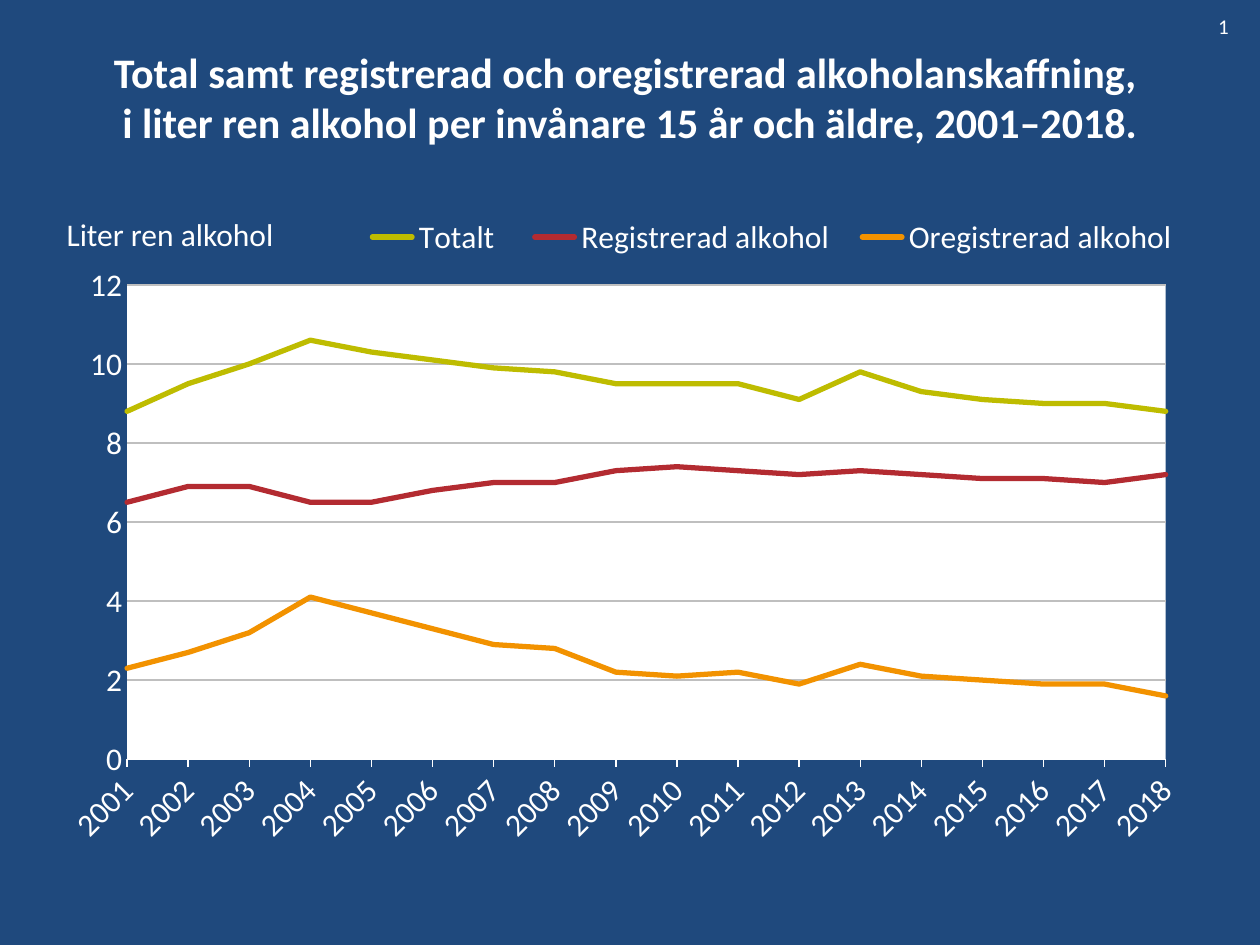
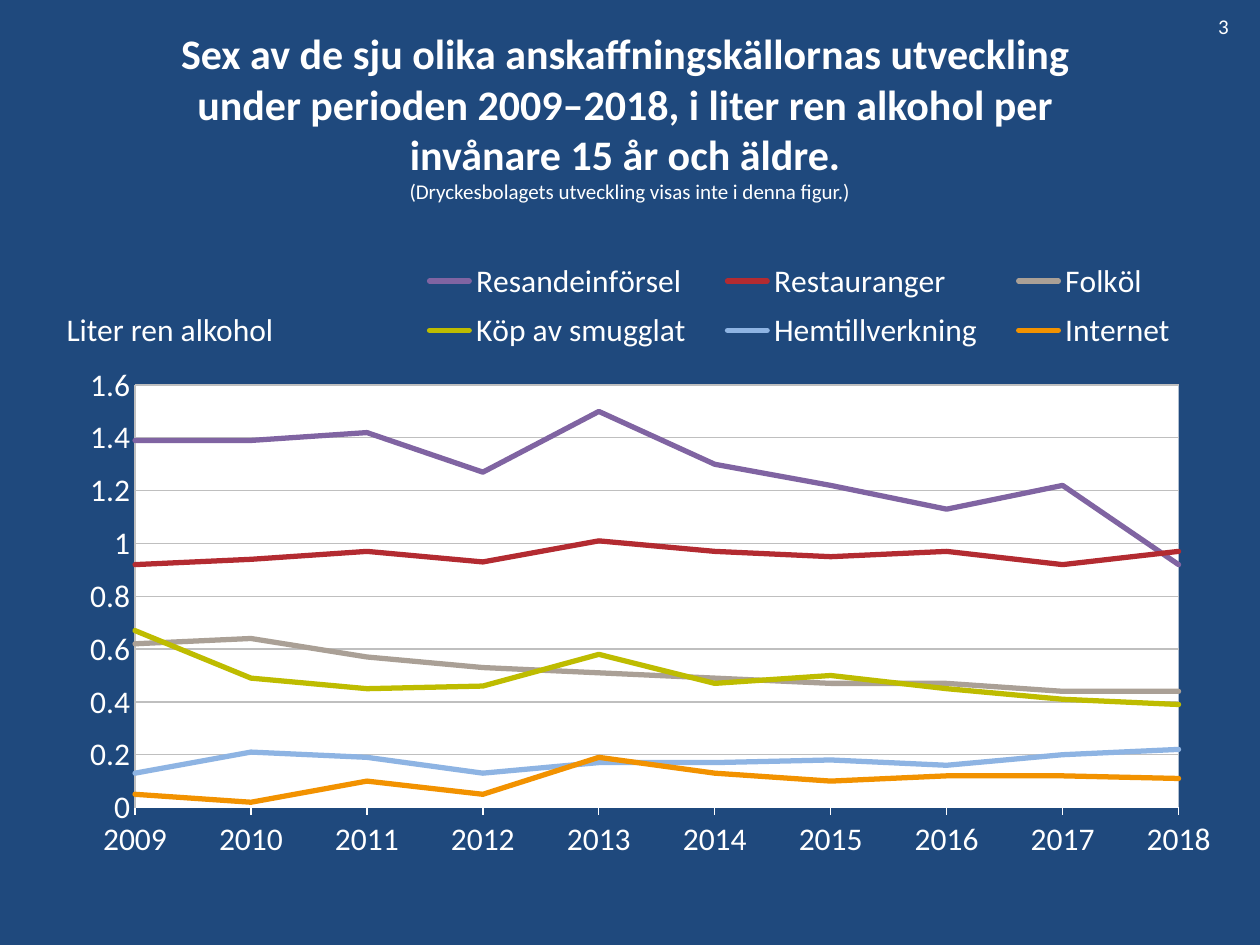
from lxml.etree import SubElement
from pptx import Presentation
from pptx.chart.data import CategoryChartData
from pptx.dml.color import RGBColor
from pptx.enum.chart import XL_CHART_TYPE, XL_LEGEND_POSITION, XL_TICK_MARK
from pptx.enum.text import MSO_ANCHOR, MSO_AUTO_SIZE, PP_ALIGN
from pptx.oxml import parse_xml
from pptx.oxml.ns import nsdecls, qn
from pptx.util import Inches, Pt

FONT = "Calibri"
NAVY, WHITE, GRID = "1F497D", "FFFFFF", "BFBFBF"
OLIVE, RED, ORANGE = "BEBC00", "B32B31", "F29200"
PURPLE, TAUPE, SKY = "8064A2", "AAA096", "8EB4E3"

# Content: positions in inches, layouts as fractions of the chart
SLIDES = [
    {
        "number": "1",
        "title": "Total samt registrerad och oregistrerad alkoholanskaffning, \v"
                 "i liter ren alkohol per invånare 15 år och äldre, 2001–2018.",
        "title_box": (0, 0.14, 10, 1.25),
        "unit_box": (0.43, 1.66, 2.05, 0.4),
        "chart_box": (0.51, 1.7, 9.06, 5.2),
        "plot_layout": (0.055, 0.108, 0.91, 0.724),
        "legend_layout": (0.25, 0.0, 0.74, 0.07),
        "years": range(2001, 2019),
        "scale": (12, 2, "0"),
        "label_angle": -45,
        "value_line": None,
        "series": [
            ("Totalt ", OLIVE, [8.8, 9.5, 10, 10.6, 10.3, 10.1, 9.9, 9.8, 9.5,
                                9.5, 9.5, 9.1, 9.8, 9.3, 9.1, 9, 9, 8.8]),
            ("Registrerad alkohol", RED, [6.5, 6.9, 6.9, 6.5, 6.5, 6.8, 7, 7, 7.3,
                                          7.4, 7.3, 7.2, 7.3, 7.2, 7.1, 7.1, 7, 7.2]),
            ("Oregistrerad alkohol", ORANGE, [2.3, 2.7, 3.2, 4.1, 3.7, 3.3, 2.9, 2.8, 2.2,
                                              2.1, 2.2, 1.9, 2.4, 2.1, 2, 1.9, 1.9, 1.6]),
        ],
    },
    {
        "number": "3",
        "title": "Sex av de sju olika anskaffningskällornas utveckling \v"
                 "under perioden 2009–2018, i liter ren alkohol per \v"
                 "invånare 15 år och äldre. \v",
        "title_note": "(Dryckesbolagets utveckling visas inte i denna figur.)",
        "title_box": (0, 0.21, 10, 1.42),
        "unit_box": (0.43, 2.41, 2.2, 0.4),
        "chart_box": (0.35, 1.94, 9.37, 5.12),
        "plot_layout": (0.077, 0.218, 0.884, 0.655),
        "legend_layout": (0.3, 0.01, 0.68, 0.17),
        "years": range(2009, 2019),
        "scale": (1.6, 0.2, "General"),
        "label_angle": 0,
        "value_line": GRID,
        "series": [
            ("Resandeinförsel", PURPLE,
             [1.39, 1.39, 1.42, 1.27, 1.5, 1.3, 1.22, 1.13, 1.22, 0.92]),
            ("Restauranger", RED,
             [0.92, 0.94, 0.97, 0.93, 1.01, 0.97, 0.95, 0.97, 0.92, 0.97]),
            ("Folköl", TAUPE,
             [0.62, 0.64, 0.57, 0.53, 0.51, 0.49, 0.47, 0.47, 0.44, 0.44]),
            ("Köp av smugglat", OLIVE,
             [0.67, 0.49, 0.45, 0.46, 0.58, 0.47, 0.5, 0.45, 0.41, 0.39]),
            ("Hemtillverkning", SKY,
             [0.13, 0.21, 0.19, 0.13, 0.17, 0.17, 0.18, 0.16, 0.2, 0.22]),
            ("Internet", ORANGE,
             [0.05, 0.02, 0.1, 0.05, 0.19, 0.13, 0.1, 0.12, 0.12, 0.11]),
        ],
    },
]


def color(hex_value):
    return RGBColor.from_string(hex_value)


def style_font(font, size, bold=False):
    font.name, font.size, font.bold = FONT, Pt(size), bold
    font.color.rgb = color(WHITE)


def style_line(line, hex_value, width=0.75):
    if hex_value is None:
        line.fill.background()
        return
    line.color.rgb = color(hex_value)
    line.width = Pt(width)


def style_master(master):
    """Shared background and title size."""
    master.background.fill.solid()
    master.background.fill.fore_color.rgb = color(NAVY)
    for properties in master.element.findall(
            f".//{qn('p:titleStyle')}/{qn('a:lvl1pPr')}/{qn('a:defRPr')}"):
        properties.set("sz", "2400")
        properties.set("b", "1")


def add_title(slide, content):
    title = slide.shapes.title
    title.left, title.top, title.width, title.height = map(Inches, content["title_box"])
    text_frame = title.text_frame
    text_frame.auto_size = MSO_AUTO_SIZE.NONE
    text_frame.vertical_anchor = MSO_ANCHOR.MIDDLE
    paragraph = text_frame.paragraphs[0]
    paragraph.text = content["title"]
    paragraph.alignment = PP_ALIGN.CENTER
    for run in paragraph.runs:
        style_font(run.font, 24, bold=True)
    if "title_note" in content:
        note = paragraph.add_run()
        note.text = content["title_note"]
        style_font(note.font, 12)


def add_label(slide, text, box, size):
    text_frame = slide.shapes.add_textbox(*map(Inches, box)).text_frame
    text_frame.word_wrap = True
    text_frame.text = text
    style_font(text_frame.paragraphs[0].runs[0].font, size)


def set_layout(parent, index, fractions, inner=False):
    """Place the plot area or the legend inside its chart."""
    for old_layout in parent.findall(qn("c:layout")):
        parent.remove(old_layout)
    layout = parse_xml(f"<c:layout {nsdecls('c')}><c:manualLayout/></c:layout>")
    settings = [("layoutTarget", "inner")] if inner else []
    settings += [("xMode", "edge"), ("yMode", "edge"), *zip("xywh", fractions)]
    for name, value in settings:
        SubElement(layout[0], qn(f"c:{name}")).set("val", str(value))
    parent.insert(index, layout)


def style_axes(chart, content):
    maximum, step, number_format = content["scale"]
    years, values = chart.category_axis, chart.value_axis
    for axis, tick, line in ((years, XL_TICK_MARK.OUTSIDE, WHITE),
                             (values, XL_TICK_MARK.NONE, content["value_line"])):
        axis.major_tick_mark, axis.minor_tick_mark = tick, XL_TICK_MARK.NONE
        style_font(axis.tick_labels.font, 18)
        style_line(axis.format.line, line)
    years.has_major_gridlines = False
    body = years._element.find(f"{qn('c:txPr')}/{qn('a:bodyPr')}")
    body.set("rot", str(content["label_angle"] * 60000))
    values.minimum_scale, values.maximum_scale, values.major_unit = 0, maximum, step
    values.tick_labels.number_format = number_format
    values.tick_labels.number_format_is_linked = False
    style_line(values.major_gridlines.format.line, GRID)
    # Lines start and end at the edges of the plot
    values._element.find(qn("c:majorUnit")).addprevious(
        parse_xml(f'<c:crossBetween {nsdecls("c")} val="midCat"/>'))


def add_line_chart(slide, content):
    data = CategoryChartData()
    data.categories = content["years"]
    for name, _, values in content["series"]:
        data.add_series(name, values)
    chart = slide.shapes.add_chart(
        XL_CHART_TYPE.LINE, *map(Inches, content["chart_box"]), data).chart
    chart.has_title = False
    style_font(chart.font, 10)
    style_axes(chart, content)
    plot = chart.plots[0]
    plot.vary_by_categories = False
    for series, (_, line_color, _) in zip(plot.series, content["series"]):
        series.smooth = False
        style_line(series.format.line, line_color, 3)
        series._element.find(f"{qn('c:spPr')}/{qn('a:ln')}").set("cap", "rnd")

    # Legend above a white plot area
    chart.has_legend = True
    chart.legend.position = XL_LEGEND_POSITION.BOTTOM
    chart.legend.include_in_layout = False
    style_font(chart.legend.font, 18)
    set_layout(chart.legend._element, 1, content["legend_layout"])
    plot_area = plot._element.getparent()
    set_layout(plot_area, 0, content["plot_layout"], inner=True)
    plot_area.append(parse_xml(
        f"<c:spPr {nsdecls('c', 'a')}><a:solidFill>"
        f'<a:srgbClr val="{WHITE}"/></a:solidFill></c:spPr>'))


def main():
    presentation = Presentation()
    presentation.slide_width, presentation.slide_height = Inches(10), Inches(7.5)
    style_master(presentation.slide_master)
    for content in SLIDES:
        slide = presentation.slides.add_slide(presentation.slide_layouts[5])
        add_title(slide, content)
        add_label(slide, content["number"], (9.57, 0.06, 0.43, 0.3), 12)
        add_line_chart(slide, content)
        add_label(slide, "Liter ren alkohol", content["unit_box"], 18)
    presentation.save("out.pptx")


if __name__ == "__main__":
    main()
